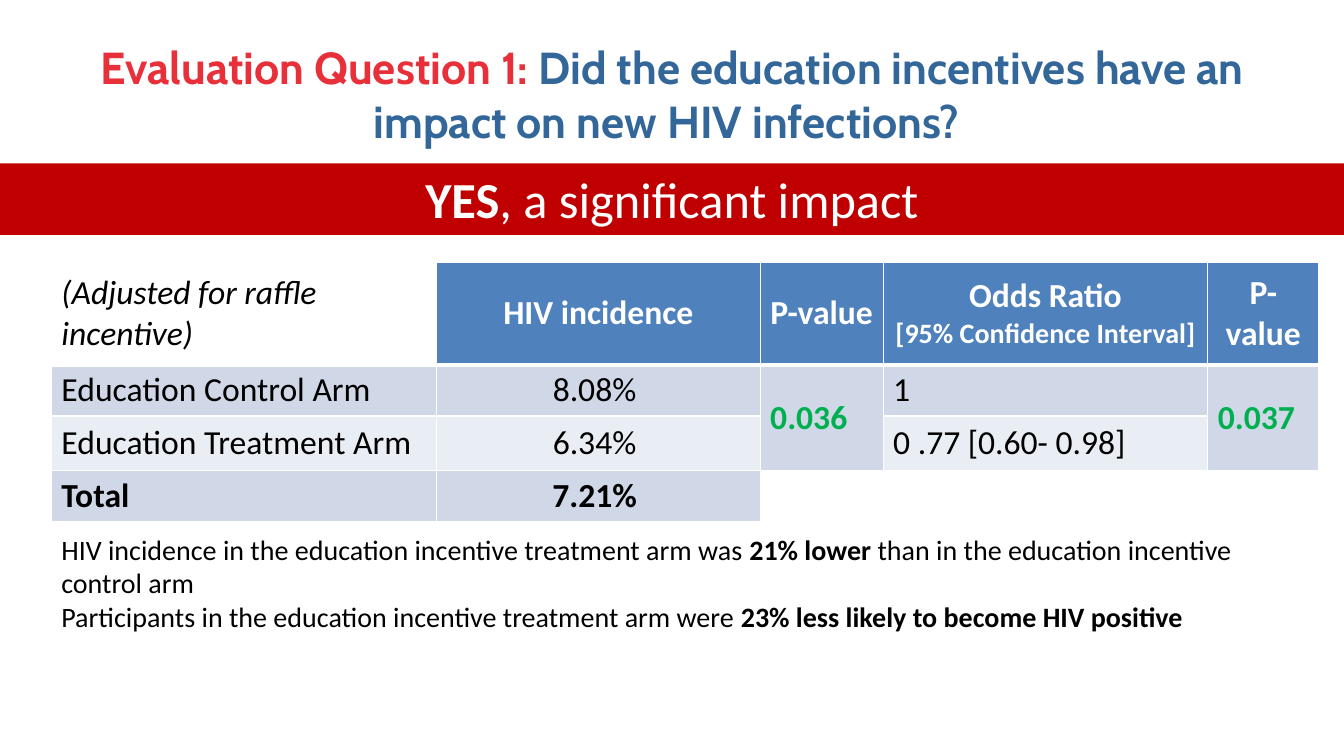
"""Build the slide on education incentives and new HIV infections."""
from dataclasses import dataclass

from lxml import etree
from pptx import Presentation
from pptx.dml.color import RGBColor
from pptx.enum import shapes, text
from pptx.oxml import ns
from pptx.util import Inches, Pt

HUES = {
    "white": "FFFFFF", "black": "000000", "red": "E8303B", "navy": "336699",
    "band": "C00000", "head": "4F81BD", "dark": "D0D8E8", "light": "E9EDF4",
    "green": "00B050",
}
MID = text.PP_ALIGN.CENTER
LEFT = text.PP_ALIGN.LEFT


@dataclass
class Run:
    """A piece of text with its own format."""
    words: str
    bold: bool = False
    slant: bool = False
    hue: str = "black"
    size: int = 0


@dataclass
class Cell:
    """A table cell: its lines, fill and alignment."""
    lines: list[list[Run]]
    fill: str = ""
    align: text.PP_ALIGN = LEFT


def paint(fill, hue: str) -> None:
    """Fill with a named colour."""
    fill.solid()
    fill.fore_color.rgb = RGBColor.from_string(HUES[hue])


def write(frame, lines: list[list[Run]], size: int = 24, font: str = "Calibri",
          align: text.PP_ALIGN = LEFT) -> None:
    """Write lines of runs into a text frame."""
    frame.word_wrap = True
    for i, line in enumerate(lines):
        para = frame.paragraphs[0] if i == 0 else frame.add_paragraph()
        para.alignment = align
        for part in line:
            run = para.add_run()
            run.text = part.words
            run.font.name = font
            run.font.size = Pt(part.size or size)
            run.font.bold = part.bold
            run.font.italic = part.slant
            run.font.color.rgb = RGBColor.from_string(HUES[part.hue])


def edge(cell, base: int) -> None:
    """Draw white borders round a cell, with the given bottom width."""
    props = cell._tc.get_or_add_tcPr()
    for i, (side, width) in enumerate(
            {"lnL": 1, "lnR": 1, "lnT": 1, "lnB": base}.items()):
        line = etree.Element(ns.qn(f"a:{side}"), w=str(Pt(width)))
        solid = etree.SubElement(line, ns.qn("a:solidFill"))
        etree.SubElement(solid, ns.qn("a:srgbClr"), val=HUES["white"])
        props.insert(i, line)


def head(*lines: Run) -> Cell:
    """Make a header cell."""
    return Cell([[line] for line in lines], "head", MID)


def white(words: str, size: int = 0) -> Run:
    """Make a bold white run."""
    return Run(words, True, hue="white", size=size)


def body(words: str, fill: str, align: text.PP_ALIGN = LEFT,
         bold: bool = False, hue: str = "black") -> Cell:
    """Make a body cell."""
    return Cell([[Run(words, bold, hue=hue)]], fill, align)


def grid(slide) -> None:
    """Add the results table."""
    none = Cell([])
    wide = [3.82, 3.21, 1.22, 3.22, 1.1]
    high = [1.02, 0.5, 0.54, 0.5]
    rows = [
        [Cell([[Run("(Adjusted for raffle incentive)", slant=True)]]),
         head(white("HIV incidence")), head(white("P-value")),
         head(white("Odds Ratio"), white("[95% Confidence Interval]", 20)),
         head(white("P-value"))],
        [body("Education Control Arm", "dark"), body("8.08% ", "dark", MID),
         body("0.036", "dark", bold=True, hue="green"), body("1", "dark"),
         body("0.037", "dark", bold=True, hue="green")],
        [body("Education Treatment Arm", "light"), body("6.34% ", "light", MID),
         none, body("0 .77 [0.60- 0.98]", "light"), none],
        [body("Total", "dark", bold=True), body("7.21% ", "dark", MID, True),
         none, none, none],
    ]
    table = slide.shapes.add_table(
        len(rows), len(wide), Inches(0.51), Inches(2.6),
        Inches(sum(wide)), Inches(sum(high))).table
    for col, width in zip(table.columns, wide):
        col.width = Inches(width)
    for row, height in zip(table.rows, high):
        row.height = Inches(height)
    for r, row in enumerate(rows):
        for c, item in enumerate(row):
            cell = table.cell(r, c)
            cell.vertical_anchor = text.MSO_ANCHOR.MIDDLE
            if item.fill:
                paint(cell.fill, item.fill)
            else:
                cell.fill.background()
            edge(cell, 3 if r == 0 else 1)
            write(cell.text_frame, item.lines, align=item.align)
    for c in (2, 4):
        table.cell(1, c).merge(table.cell(2, c))


def place(shape, *box: float) -> None:
    """Set left, top, width and height in inches."""
    shape.left, shape.top, shape.width, shape.height = map(Inches, box)


def main() -> None:
    """Build and save the slide."""
    deck = Presentation()
    deck.slide_width, deck.slide_height = Inches(13.33), Inches(7.5)
    slide = deck.slides.add_slide(deck.slide_layouts[5])

    title = slide.shapes.title
    place(title, 0.82, 0.3, 11.69, 1.25)
    title.text_frame.vertical_anchor = text.MSO_ANCHOR.MIDDLE
    title.text_frame.auto_size = text.MSO_AUTO_SIZE.NONE
    write(title.text_frame, [[
        Run("Evaluation Question 1: ", True, hue="red"),
        Run("Did the education incentives have an impact on new HIV "
            "infections? ", True, hue="navy")]], 32, "Cabin", MID)

    grid(slide)

    note = slide.shapes.add_textbox(
        Inches(0.51), Inches(5.23), Inches(12.45), Inches(1.11))
    write(note.text_frame, [
        [Run("HIV incidence in the education incentive treatment arm was "),
         Run("21% lower ", True),
         Run("than in the education incentive control arm")],
        [Run("Participants in the education incentive treatment arm were "),
         Run("23% less likely to become HIV positive", True)]], 20)

    band = slide.shapes.add_shape(
        shapes.MSO_SHAPE.RECTANGLE, 0, Inches(1.62), deck.slide_width,
        Inches(0.71))
    band.shadow.inherit = False
    paint(band.fill, "band")
    band.line.fill.background()
    band.text_frame.vertical_anchor = text.MSO_ANCHOR.TOP
    write(band.text_frame, [[
        white("YES"), Run(", a significant impact", hue="white")]],
        36, align=MID)

    deck.save("out.pptx")


if __name__ == "__main__":
    main()
